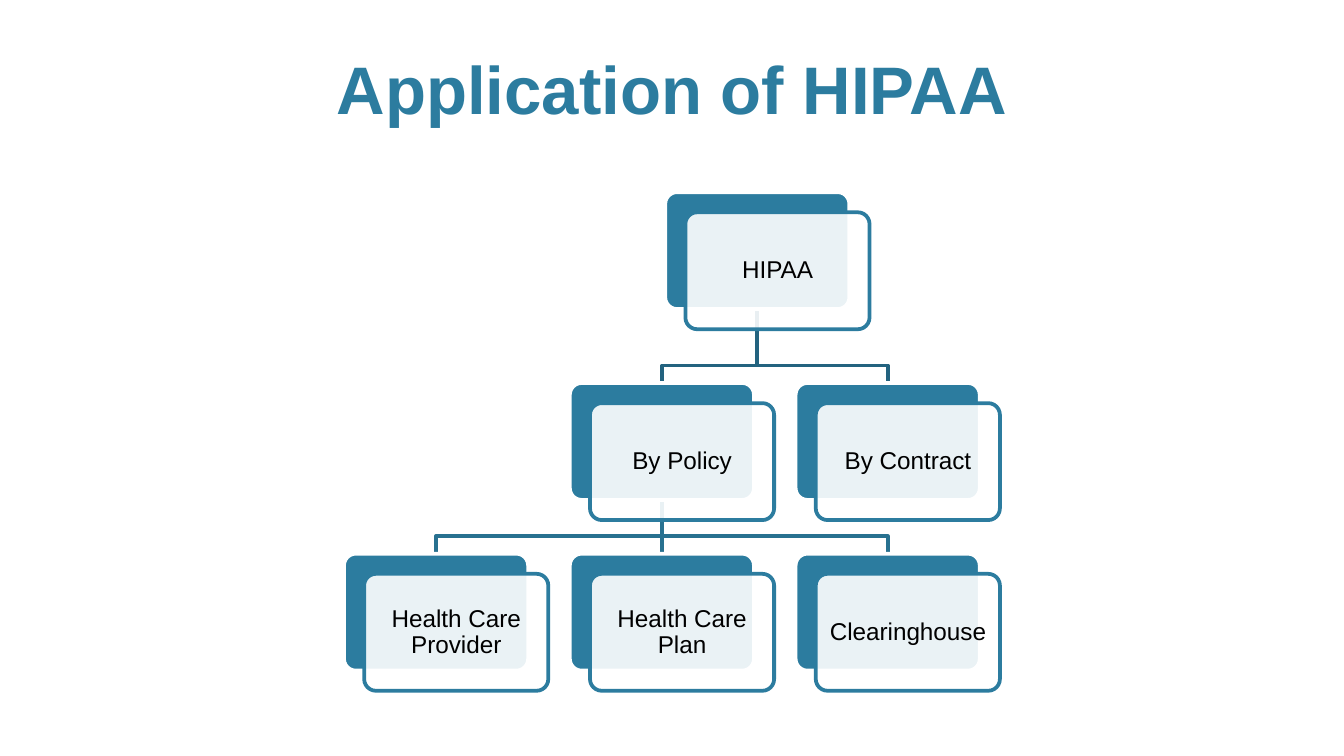
from lxml import etree
from pptx import Presentation
from pptx import util as u
from pptx.dml.color import RGBColor
from pptx.enum import shapes, text
from pptx.oxml import ns

Inches = u.Inches

COLORS = {
    "teal": "2C7C9F",
    "upper_link": "23637F",
    "lower_link": "287190",
    "white": "FFFFFF",
    "black": "000000",
}
CARD_W, CARD_H = 1.37, 0.87
OFFSET = 0.15
COLUMNS = [2.56 + 1.68 * i for i in range(3)]
ROWS = [1.43, 2.85, 4.12]
CARDS = {
    "HIPAA": (4.95, ROWS[0]),
    "By Policy": (COLUMNS[1], ROWS[1]),
    "Health Care Provider": (COLUMNS[0], ROWS[2]),
    "Health Care Plan": (COLUMNS[1], ROWS[2]),
    "Clearinghouse": (COLUMNS[2], ROWS[2]),
    "By Contract": (COLUMNS[2], ROWS[1]),
}
ELBOWS = [
    ("HIPAA", "By Contract", "upper_link"),
    ("By Policy", "Clearinghouse", "lower_link"),
    ("By Policy", "Health Care Provider", "lower_link"),
    ("HIPAA", "By Policy", "upper_link"),
]


def rgb(name):
    return RGBColor.from_string(COLORS[name])


def write_text(owner, words, size, color, bold=False, anchor=text.MSO_ANCHOR.MIDDLE,
               margins=(0.07, 0.07), spacing=None, after=0):
    frame = owner.text_frame
    frame.word_wrap = True
    frame.auto_size = text.MSO_AUTO_SIZE.NONE
    frame.vertical_anchor = anchor
    frame.margin_left = frame.margin_right = Inches(margins[0])
    frame.margin_top = frame.margin_bottom = Inches(margins[1])
    paragraph = frame.paragraphs[0]
    paragraph.alignment = text.PP_ALIGN.CENTER
    paragraph.line_spacing = spacing
    paragraph.space_after = u.Pt(after)
    run = paragraph.add_run()
    run.text = words
    run.font.name = "Arial"
    run.font.size = u.Pt(size)
    run.font.bold = bold
    run.font.color.rgb = rgb(color)


def set_line(owner, color):
    owner.line.color.rgb = rgb(color)
    owner.line.width = u.Pt(2)


def add_title(slide, words):
    title = slide.shapes.title
    title.left, title.top = Inches(0.6), Inches(0.47)
    title.width, title.height = Inches(8.8), Inches(0.53)
    write_text(title, words, 36, "teal", bold=True,
               anchor=text.MSO_ANCHOR.BOTTOM, margins=(0.1, 0.05))


def add_elbow(slide, parent, child, color):
    start_x, start_y = CARDS[parent][0] + CARD_W / 2, CARDS[parent][1] + CARD_H
    end_x, end_y = CARDS[child][0] + CARD_W / 2, CARDS[child][1]
    bend_y = end_y - 0.13
    builder = slide.shapes.build_freeform(Inches(start_x), Inches(start_y))
    corners = [(start_x, bend_y), (end_x, bend_y), (end_x, end_y)]
    builder.add_line_segments([(Inches(x), Inches(y)) for x, y in corners], close=False)
    elbow = builder.convert_to_shape()
    elbow.shadow.inherit = False
    elbow.fill.background()
    set_line(elbow, color)


def add_straight_link(slide, color):
    link = slide.shapes.add_connector(shapes.MSO_CONNECTOR.STRAIGHT, 0, 0, 0, 0)
    set_line(link, color)
    etree.SubElement(link.element.spPr, ns.qn("a:effectLst"))
    return link


def add_panel(slide, left, top, fill, line):
    panel = slide.shapes.add_shape(
        shapes.MSO_SHAPE.ROUNDED_RECTANGLE,
        Inches(left), Inches(top), Inches(CARD_W), Inches(CARD_H))
    panel.adjustments[0] = 0.1
    panel.shadow.inherit = False
    panel.fill.solid()
    panel.fill.fore_color.rgb = rgb(fill)
    set_line(panel, line)
    return panel


def add_card(slide, label):
    left, top = CARDS[label]
    back = add_panel(slide, left, top, "teal", "white")
    front = add_panel(slide, left + OFFSET, top + OFFSET, "white", "teal")
    fill_color = front.element.spPr.find(ns.qn("a:solidFill"))[0]
    etree.SubElement(fill_color, ns.qn("a:alpha"), val="90000")
    write_text(front, label, 13, "black", spacing=0.9, after=4.5)
    return back


def main():
    deck = Presentation()
    deck.slide_width = Inches(10)
    deck.slide_height = Inches(10 * 9 / 16)
    slide = deck.slides.add_slide(deck.slide_layouts[5])
    add_title(slide, "Application of HIPAA")
    for parent, child, color in ELBOWS:
        add_elbow(slide, parent, child, color)
    plan_link = add_straight_link(slide, "lower_link")
    backs = {label: add_card(slide, label) for label in CARDS}
    plan_link.begin_connect(backs["By Policy"], 2)
    plan_link.end_connect(backs["Health Care Plan"], 0)
    deck.save("out.pptx")


if __name__ == "__main__":
    main()
